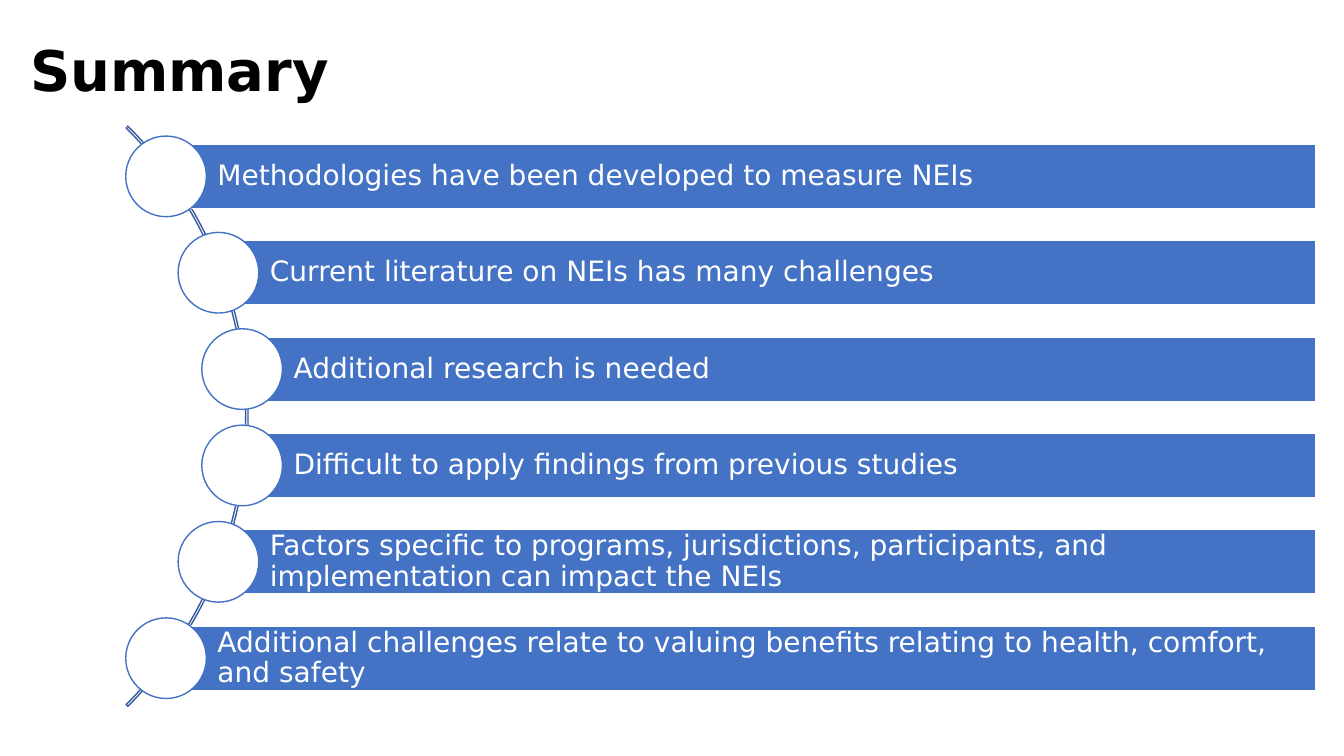
from math import sqrt
from pptx import Presentation
from pptx.dml.color import RGBColor
from pptx.enum.shapes import MSO_SHAPE as Shape
from pptx.enum.text import MSO_ANCHOR as Anchor, MSO_AUTO_SIZE as Fit, PP_ALIGN as Align
from pptx.util import Inches, Pt

COLORS = {"bar": "4472C4", "arc": "365B9D", "white": "FFFFFF", "black": "000000"}
FONT = "DejaVu Sans"
POINTS = [
    "Methodologies have been developed to measure NEIs",
    "Current literature on NEIs has many challenges",
    "Additional research is needed",
    "Difficult to apply findings from previous studies",
    "Factors specific to programs, jurisdictions, participants, "
    "and implementation can impact the NEIs",
    "Additional challenges relate to valuing benefits relating to health, "
    "comfort, and safety",
]


def draw(kind, left, top, width, height, fill, line):
    shape = slide.shapes.add_shape(
        kind, Inches(left), Inches(top), Inches(width), Inches(height))
    shape.shadow.inherit = False
    if fill:
        shape.fill.solid()
        shape.fill.fore_color.rgb = RGBColor.from_string(COLORS[fill])
    else:
        shape.fill.background()
    shape.line.color.rgb = RGBColor.from_string(COLORS[line])
    shape.line.width = Pt(1)
    return shape


def write(frame, text, size, color, bold=False):
    frame.word_wrap = True
    frame.auto_size = Fit.NONE
    frame.vertical_anchor = Anchor.MIDDLE
    para = frame.paragraphs[0]
    para.alignment = Align.LEFT
    para.line_spacing = 0.9
    run = para.add_run()
    run.text = text
    run.font.name = FONT
    run.font.size = Pt(size)
    run.font.bold = bold
    run.font.color.rgb = RGBColor.from_string(COLORS[color])


deck = Presentation()
deck.slide_width, deck.slide_height = Inches(13.33), Inches(7.5)
slide = deck.slides.add_slide(deck.slide_layouts[5])

# Title
title = slide.shapes.title
title.left, title.top = Inches(0.2), Inches(0)
title.width, title.height = Inches(11.5), Inches(1.45)
write(title.text_frame, "Summary", 40, "black", bold=True)

# Arc behind the circles
mid_x, mid_y, outer = -1.61, 4.13, 4.07
arc = draw(Shape.BLOCK_ARC, mid_x - outer, mid_y - outer, 2 * outer, 2 * outer,
           None, "arc")
for i, value in enumerate((189, 27, 0.003)):
    arc.adjustments[i] = value

# Bars and circles, centred along the arc
radius, pitch, right = 4.04, 0.956, 13.05
bar_h, dot = 0.64, 0.8
for i, text in enumerate(POINTS):
    drop = (i - (len(POINTS) - 1) / 2) * pitch
    x, y = mid_x + sqrt(radius ** 2 - drop ** 2), mid_y + 0.01 + drop
    bar = draw(Shape.RECTANGLE, x, y - bar_h / 2, right - x, bar_h, "bar", "white")
    frame = bar.text_frame
    frame.margin_left = Inches(0.51)
    frame.margin_top = frame.margin_right = frame.margin_bottom = Inches(0.06)
    write(frame, text, 20, "white")
    draw(Shape.OVAL, x - dot / 2, y - dot / 2, dot, dot, "white", "bar")

deck.save("out.pptx")
